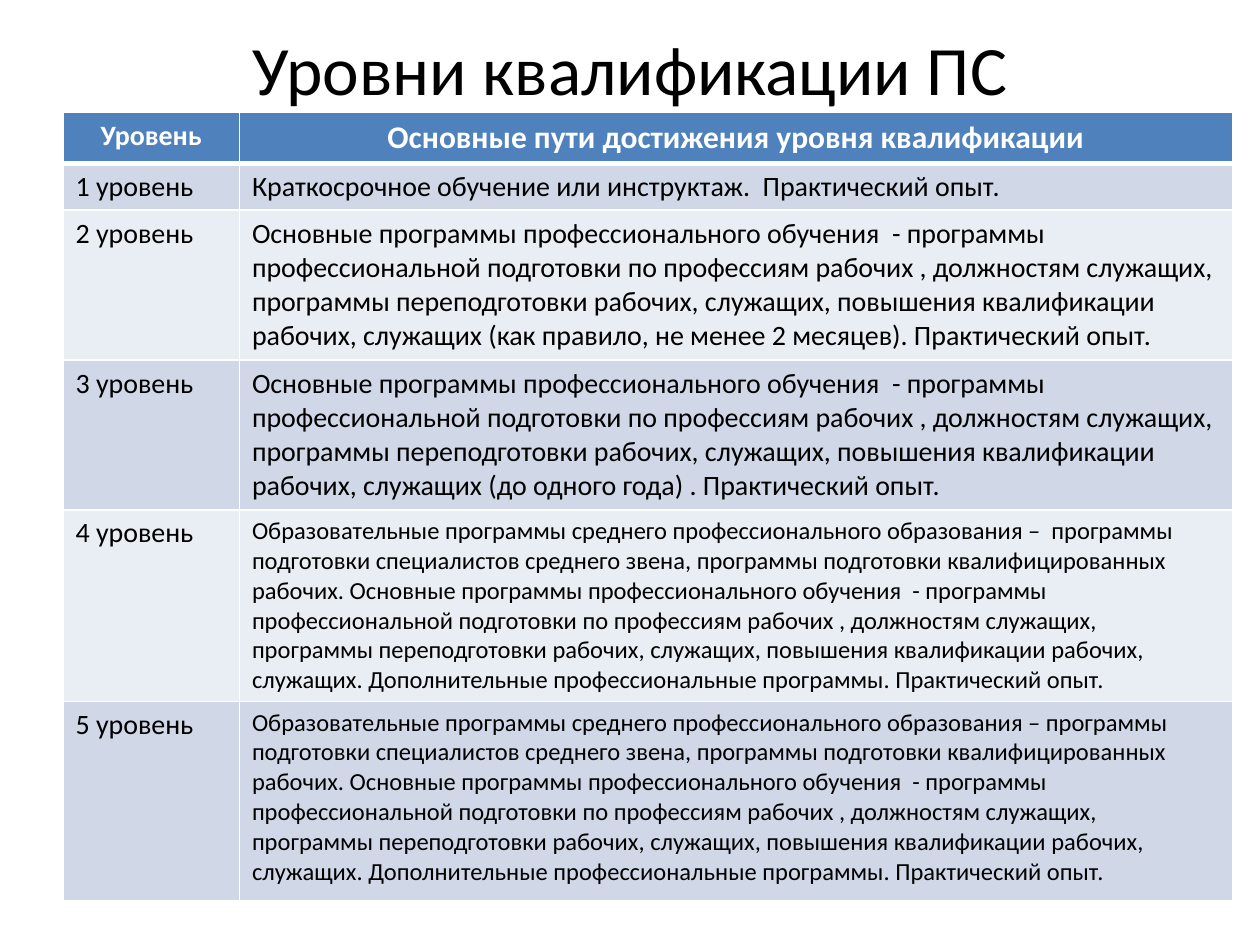
"""Build the slide with the table of qualification levels."""
import dataclasses

import lxml.etree
import pptx
import pptx.dml.color
import pptx.enum.text
import pptx.oxml.ns
import pptx.slide
import pptx.table
import pptx.text.text
import pptx.util

BLACK = pptx.dml.color.RGBColor(0x00, 0x00, 0x00)
WHITE = pptx.dml.color.RGBColor(0xFF, 0xFF, 0xFF)
HEADER_BLUE = pptx.dml.color.RGBColor(0x4F, 0x81, 0xBD)
BAND_DARK = pptx.dml.color.RGBColor(0xD0, 0xD8, 0xE8)
BAND_LIGHT = pptx.dml.color.RGBColor(0xE9, 0xED, 0xF4)

FONT = "Calibri"
SLIDE_WIDTH = pptx.util.Inches(10)
SLIDE_HEIGHT = pptx.util.Inches(7.5)
GRID_COLUMNS, GRID_ROWS = 100, 75
COLUMN_SPANS = (14, 78.8)
THIN, THICK = 1, 3

TRAINING = (
    "Основные программы профессионального обучения  - программы "
    "профессиональной подготовки по профессиям рабочих , должностям служащих, "
    "программы переподготовки рабочих, служащих, повышения квалификации "
    "рабочих, служащих"
)
EDUCATION = (
    "программы  подготовки специалистов среднего звена, программы подготовки "
    f"квалифицированных  рабочих. {TRAINING}. "
    "Дополнительные профессиональные программы. Практический опыт."
)
SECONDARY = "Образовательные программы среднего профессионального образования –"


@dataclasses.dataclass(frozen=True)
class LevelRow:
    """One row of the table: texts, height in grid rows and text sizes."""

    level: str
    route: str
    span: float
    route_size: int = 16
    level_size: int = 16


ROWS = (
    LevelRow("Уровень", "Основные пути достижения уровня квалификации", 4, 18),
    LevelRow("1 уровень", "Краткосрочное обучение или инструктаж.  Практический опыт.", 3.6),
    LevelRow("2 уровень", f"{TRAINING} (как правило, не менее 2 месяцев). Практический опыт.", 11.9),
    LevelRow("3 уровень", f"{TRAINING} (до одного года) . Практический опыт.", 11.9),
    LevelRow("4 уровень", f"{SECONDARY}  {EDUCATION}", 15.2, 14),
    LevelRow("5 уровень", f"{SECONDARY} {EDUCATION}", 15.8, 14),
)


def across(columns: float) -> int:
    """Return the width of a number of grid columns."""
    return round(SLIDE_WIDTH * columns / GRID_COLUMNS)


def down(rows: float) -> int:
    """Return the height of a number of grid rows."""
    return round(SLIDE_HEIGHT * rows / GRID_ROWS)


def write_text(
    text_frame: pptx.text.text.TextFrame,
    text: str,
    size: float,
    color: pptx.dml.color.RGBColor,
    bold: bool,
    alignment: pptx.enum.text.PP_ALIGN,
) -> None:
    """Set the text of a frame and format its run."""
    text_frame.text = text
    paragraph = text_frame.paragraphs[0]
    paragraph.alignment = alignment
    font = paragraph.runs[0].font
    font.name, font.size, font.bold = FONT, pptx.util.Pt(size), bold
    font.color.rgb = color


def draw_borders(cell: pptx.table._Cell, top: int, bottom: int) -> None:
    """Give a cell white borders of the given widths in points."""
    properties = cell._tc.get_or_add_tcPr()
    sides = {"lnL": THIN, "lnR": THIN, "lnT": top, "lnB": bottom}
    for index, (side, width) in enumerate(sides.items()):
        line = lxml.etree.Element(pptx.oxml.ns.qn(f"a:{side}"), w=str(pptx.util.Pt(width)))
        fill = lxml.etree.SubElement(line, pptx.oxml.ns.qn("a:solidFill"))
        lxml.etree.SubElement(fill, pptx.oxml.ns.qn("a:srgbClr"), val=str(WHITE))
        properties.insert(index, line)


def draw_title(slide: pptx.slide.Slide) -> None:
    """Place and format the title placeholder."""
    title = slide.shapes.title
    title.left, title.top = across(5), down(3)
    title.width, title.height = across(90), down(4.8)
    text_frame = title.text_frame
    text_frame.vertical_anchor = pptx.enum.text.MSO_ANCHOR.MIDDLE
    text_frame.auto_size = pptx.enum.text.MSO_AUTO_SIZE.NONE
    write_text(text_frame, "Уровни квалификации ПС", 39.6, BLACK, False, pptx.enum.text.PP_ALIGN.CENTER)


def draw_row(table: pptx.table.Table, index: int, row: LevelRow) -> None:
    """Fill one table row, with the first one styled as a header."""
    header = index == 0
    table.rows[index].height = down(row.span)
    band = HEADER_BLUE if header else BAND_DARK if index % 2 else BAND_LIGHT
    alignment = pptx.enum.text.PP_ALIGN.CENTER if header else pptx.enum.text.PP_ALIGN.LEFT
    texts = ((row.level, row.level_size), (row.route, row.route_size))
    for cell, (text, size) in zip(table.rows[index].cells, texts):
        cell.fill.solid()
        cell.fill.fore_color.rgb = band
        write_text(cell.text_frame, text, size, WHITE if header else BLACK, header, alignment)
        draw_borders(cell, THICK if index == 1 else THIN, THICK if header else THIN)


def draw_table(slide: pptx.slide.Slide) -> None:
    """Add the table of levels and the routes to them."""
    height = down(sum(row.span for row in ROWS))
    frame = slide.shapes.add_table(
        len(ROWS), len(COLUMN_SPANS), across(5), down(8.9), across(sum(COLUMN_SPANS)), height
    )
    table = frame.table
    table.first_row = table.horz_banding = False
    for column, span in zip(table.columns, COLUMN_SPANS):
        column.width = across(span)
    for index, row in enumerate(ROWS):
        draw_row(table, index, row)


def main() -> None:
    """Build and save the presentation."""
    presentation = pptx.Presentation()
    presentation.slide_width, presentation.slide_height = SLIDE_WIDTH, SLIDE_HEIGHT
    slide = presentation.slides.add_slide(presentation.slide_layouts.get_by_name("Title Only"))
    draw_title(slide)
    draw_table(slide)
    presentation.save("out.pptx")


if __name__ == "__main__":
    main()
